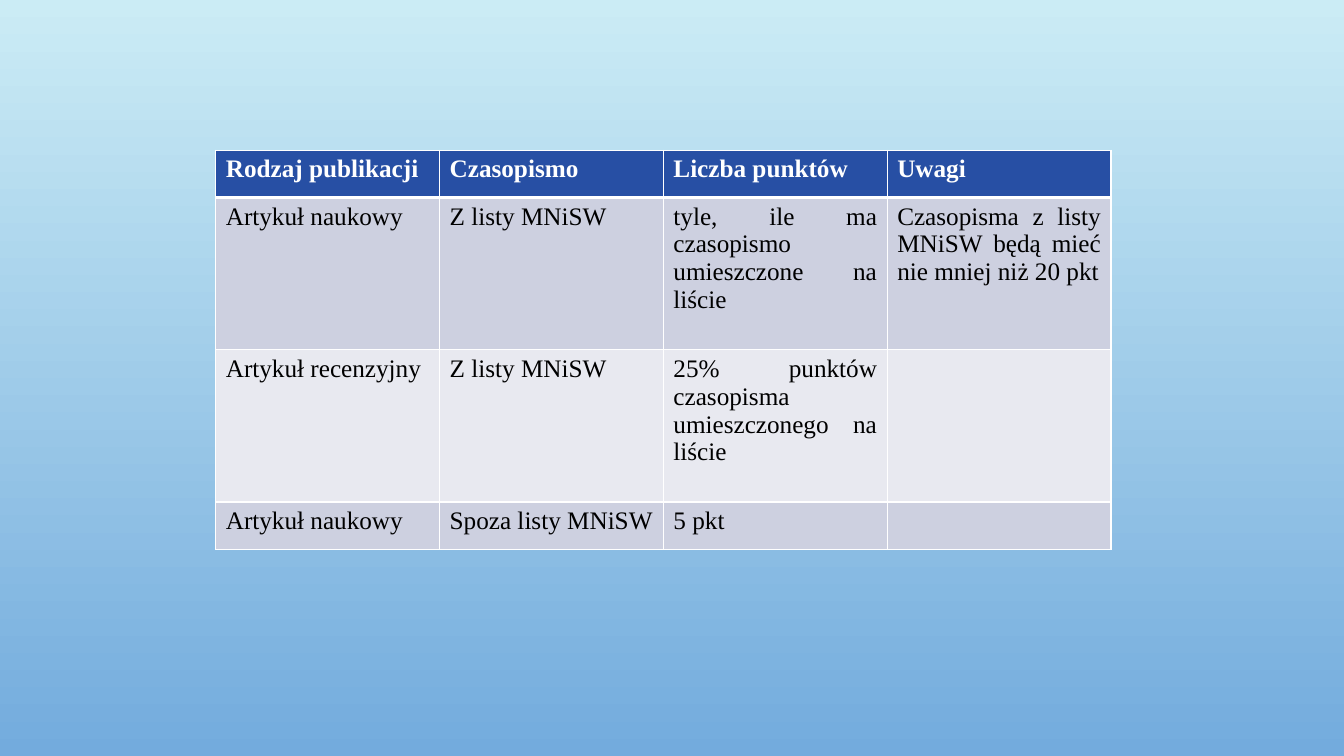
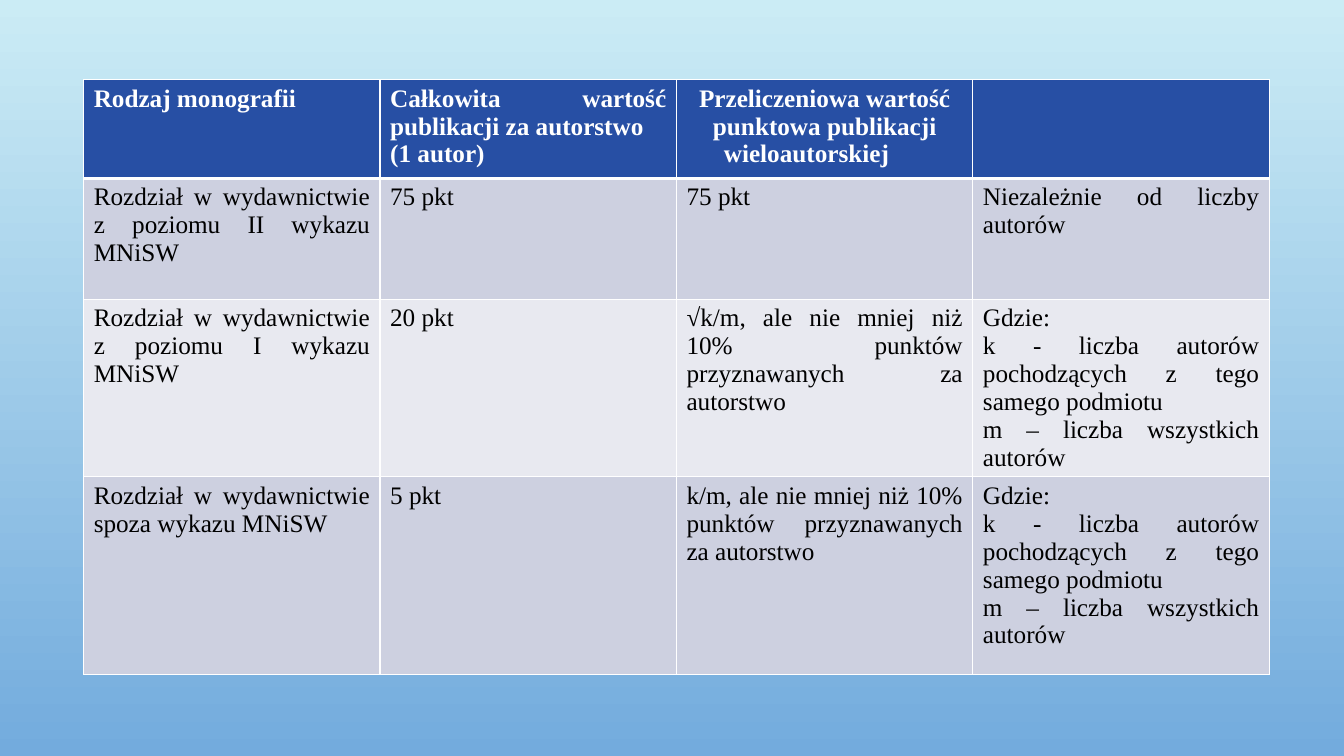
from dataclasses import dataclass

from lxml import etree
from pptx import Presentation
from pptx.dml.color import RGBColor
from pptx.enum.text import PP_ALIGN
from pptx.oxml.ns import qn
from pptx.util import Inches, Pt

JUSTIFY = PP_ALIGN.JUSTIFY
CENTER = PP_ALIGN.CENTER
BLANK_LAYOUT = 6

SKY_TOP, SKY_BOTTOM = "CBECF5", "73ABDD"
HEADER_FILL = "274FA4"
BAND_FILLS = ("CDD0E0", "E8E9F0")
WHITE, BLACK = "FFFFFF", "000000"
THIN, THICK = 1, 3
CELL_FONT = {"name": "Times New Roman", "size": Pt(18)}

AUTHOR_KEY = (
    "Gdzie:\n"
    "k - liczba autorów pochodzących z tego samego podmiotu\n"
    "m – liczba wszystkich autorów"
)


@dataclass(frozen=True)
class PointsTable:
    left: float
    top: float
    column_width: float
    row_heights: tuple[float, ...]
    rows: tuple[tuple[str, ...], ...]
    centered_headers: tuple[int, ...] = ()


ARTICLES = PointsTable(
    left=2.14,
    top=1.49,
    column_width=2.22,
    row_heights=(0.47, 1.51, 1.51, 0.47),
    rows=(
        ("Rodzaj publikacji", "Czasopismo", "Liczba punktów", "Uwagi"),
        (
            "Artykuł naukowy",
            "Z listy MNiSW",
            "tyle, ile ma czasopismo umieszczone na liście",
            "Czasopisma z listy MNiSW będą mieć nie mniej niż 20 pkt",
        ),
        (
            "Artykuł recenzyjny",
            "Z listy MNiSW",
            "25% punktów czasopisma umieszczonego na liście",
            "",
        ),
        ("Artykuł naukowy", "Spoza listy MNiSW", "5 pkt", ""),
    ),
)

CHAPTERS = PointsTable(
    left=0.83,
    top=0.79,
    column_width=2.94,
    row_heights=(0.98, 1.2, 1.69, 1.96),
    rows=(
        (
            "Rodzaj monografii",
            "Całkowita wartość publikacji za autorstwo\n(1 autor)",
            "Przeliczeniowa wartość punktowa publikacji wieloautorskiej \t",
            "",
        ),
        (
            "Rozdział w wydawnictwie z poziomu II wykazu MNiSW",
            "75 pkt",
            "75 pkt",
            "Niezależnie od liczby autorów",
        ),
        (
            "Rozdział w wydawnictwie z poziomu I wykazu MNiSW",
            "20 pkt",
            "√k/m, ale nie mniej niż 10% punktów przyznawanych za autorstwo",
            AUTHOR_KEY,
        ),
        (
            "Rozdział w wydawnictwie spoza wykazu MNiSW",
            "5 pkt",
            "k/m, ale nie mniej niż 10% punktów przyznawanych za autorstwo",
            AUTHOR_KEY,
        ),
    ),
    centered_headers=(2,),
)


def color(value: str) -> RGBColor:
    return RGBColor.from_string(value)


def paint_background(master) -> None:
    fill = master.background.fill
    fill.gradient()
    fill.gradient_angle = 270
    for stop, shade in zip(fill.gradient_stops, (SKY_TOP, SKY_BOTTOM)):
        stop.color.rgb = color(shade)


def add_borders(cell, row: int) -> None:
    widths = {
        "a:lnL": THIN,
        "a:lnR": THIN,
        "a:lnT": THICK if row == 1 else THIN,
        "a:lnB": THICK if row == 0 else THIN,
    }
    properties = cell._tc.get_or_add_tcPr()
    for tag, width in widths.items():
        border = etree.SubElement(properties, qn(tag), w=str(Pt(width)))
        solid = etree.SubElement(border, qn("a:solidFill"))
        etree.SubElement(solid, qn("a:srgbClr"), val=WHITE)


def write_cell(cell, text: str, row: int, centered: bool) -> None:
    is_header = row == 0
    add_borders(cell, row)
    cell.fill.solid()
    cell.fill.fore_color.rgb = color(
        HEADER_FILL if is_header else BAND_FILLS[(row - 1) % 2]
    )
    cell.text = text
    for paragraph in cell.text_frame.paragraphs:
        paragraph.alignment = CENTER if centered else JUSTIFY
        for attribute, value in {**CELL_FONT, "bold": is_header}.items():
            setattr(paragraph.font, attribute, value)
        paragraph.font.color.rgb = color(WHITE if is_header else BLACK)


def add_points_table(slide, points: PointsTable) -> None:
    column_count = len(points.rows[0])
    table = slide.shapes.add_table(
        len(points.rows),
        column_count,
        Inches(points.left),
        Inches(points.top),
        Inches(points.column_width * column_count),
        Inches(sum(points.row_heights)),
    ).table
    for column in table.columns:
        column.width = Inches(points.column_width)
    for row, (height, texts) in enumerate(zip(points.row_heights, points.rows)):
        table.rows[row].height = Inches(height)
        for column, text in enumerate(texts):
            centered = row == 0 and column in points.centered_headers
            write_cell(table.cell(row, column), text, row, centered)


def main() -> None:
    presentation = Presentation()
    presentation.slide_width = Inches(13.33)
    presentation.slide_height = Inches(7.5)
    paint_background(presentation.slide_master)
    for points in (ARTICLES, CHAPTERS):
        slide = presentation.slides.add_slide(
            presentation.slide_layouts[BLANK_LAYOUT]
        )
        add_points_table(slide, points)
    presentation.save("out.pptx")


if __name__ == "__main__":
    main()
